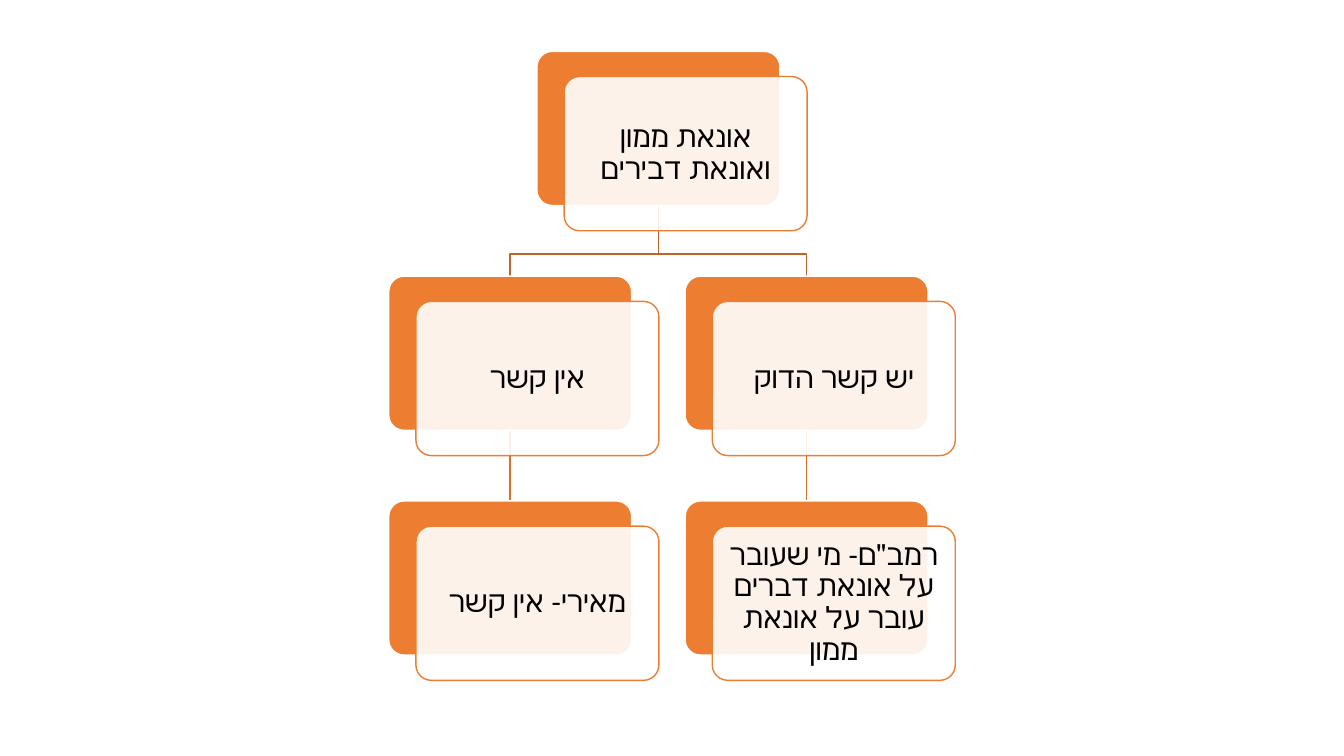
from lxml import etree
from pptx import Presentation, util as u
from pptx.dml.color import RGBColor
from pptx.enum import shapes, text
from pptx.oxml.ns import qn

# Content: text, centre x of the back card, row, parent index
NODES = [
    ("אונאת ממון ואונאת דבירים", 6.53, 0, None),
    ("יש קשר הדוק", 8.0, 1, 0),
    ('רמב"ם- מי שעובר על אונאת דברים עובר על אונאת ממון', 8.0, 2, 1),
    ("אין קשר", 5.06, 1, 0),
    ("מאירי- אין קשר", 5.06, 2, 3),
]

ORANGE = RGBColor(0xED, 0x7D, 0x31)
BRANCH = RGBColor(0xBE, 0x64, 0x27)
STEM = RGBColor(0xD7, 0x71, 0x2C)
WHITE = RGBColor(0xFF, 0xFF, 0xFF)
BLACK = RGBColor(0, 0, 0)

# Geometry in inches
CARD_WIDTH, CARD_HEIGHT = 2.41, 1.53
FIRST_TOP, ROW_STEP = 0.51, 2.23
SHIFT_X, SHIFT_Y = 0.27, 0.25
BEND_DROP = 0.48
INSET = u.Inches(0.09)
FRAME_FORMAT = {
    "word_wrap": True, "vertical_anchor": text.MSO_ANCHOR.MIDDLE,
    "margin_left": INSET, "margin_right": INSET,
    "margin_top": INSET, "margin_bottom": INSET,
}
FONT_FORMAT = {"name": "Calibri", "size": u.Pt(21)}

presentation = Presentation()
presentation.slide_width = u.Inches(13.33)
presentation.slide_height = u.Inches(7.5)
slide = presentation.slides.add_slide(presentation.slide_layouts[6])


def apply_format(target, values):
    for name, value in values.items():
        setattr(target, name, value)


def set_line(shape, color):
    shape.line.color.rgb = color
    shape.line.width = u.Pt(1)


def row_top(row):
    return FIRST_TOP + row * ROW_STEP


def add_stem(x, top, bottom):
    connector = slide.shapes.add_connector(
        shapes.MSO_CONNECTOR.STRAIGHT,
        u.Inches(x), u.Inches(top), u.Inches(x), u.Inches(bottom))
    set_line(connector, STEM)
    etree.SubElement(connector._element.spPr, qn("a:effectLst"))


def add_branch(start_x, end_x, top, bottom):
    bend = top + BEND_DROP
    corners = [(start_x, top), (start_x, bend), (end_x, bend), (end_x, bottom)]
    points = [(u.Inches(x), u.Inches(y)) for x, y in corners]
    builder = slide.shapes.build_freeform(*points[0])
    builder.add_line_segments(points[1:], close=False)
    branch = builder.convert_to_shape()
    branch.shadow.inherit = False
    branch.fill.background()
    set_line(branch, BRANCH)


def add_card(left, top, fill, line):
    card = slide.shapes.add_shape(
        shapes.MSO_SHAPE.ROUNDED_RECTANGLE, u.Inches(left), u.Inches(top),
        u.Inches(CARD_WIDTH), u.Inches(CARD_HEIGHT))
    card.adjustments[0] = 0.1
    card.shadow.inherit = False
    card.fill.solid()
    card.fill.fore_color.rgb = fill
    set_line(card, line)
    return card


def add_label(card, label):
    apply_format(card.text_frame, FRAME_FORMAT)
    paragraph = card.text_frame.paragraphs[0]
    apply_format(paragraph, {"alignment": text.PP_ALIGN.CENTER, "line_spacing": 0.9})
    paragraph._p.get_or_add_pPr().set("rtl", "1")
    run = paragraph.add_run()
    run.text = label
    apply_format(run.font, FONT_FORMAT)
    run.font.color.rgb = BLACK
    # Hebrew takes the theme's complex-script font
    properties = run._r.get_or_add_rPr()
    properties.set("lang", "he-IL")
    etree.SubElement(properties, qn("a:cs"), typeface="+mn-cs")


# Links from parent to child, behind the cards
for label, center, row, parent in NODES:
    if parent is None:
        continue
    parent_center = NODES[parent][1]
    top, bottom = row_top(row - 1) + CARD_HEIGHT, row_top(row)
    if parent_center == center:
        add_stem(center, top, bottom)
    else:
        add_branch(parent_center, center, top, bottom)

# Orange back card and translucent front card for each node
for label, center, row, parent in NODES:
    left, top = center - CARD_WIDTH / 2, row_top(row)
    add_card(left, top, ORANGE, WHITE)
    front = add_card(left + SHIFT_X, top + SHIFT_Y, WHITE, ORANGE)
    color = front._element.spPr.find(qn("a:solidFill"))[0]
    etree.SubElement(color, qn("a:alpha"), val="90000")
    add_label(front, label)

presentation.save("out.pptx")
